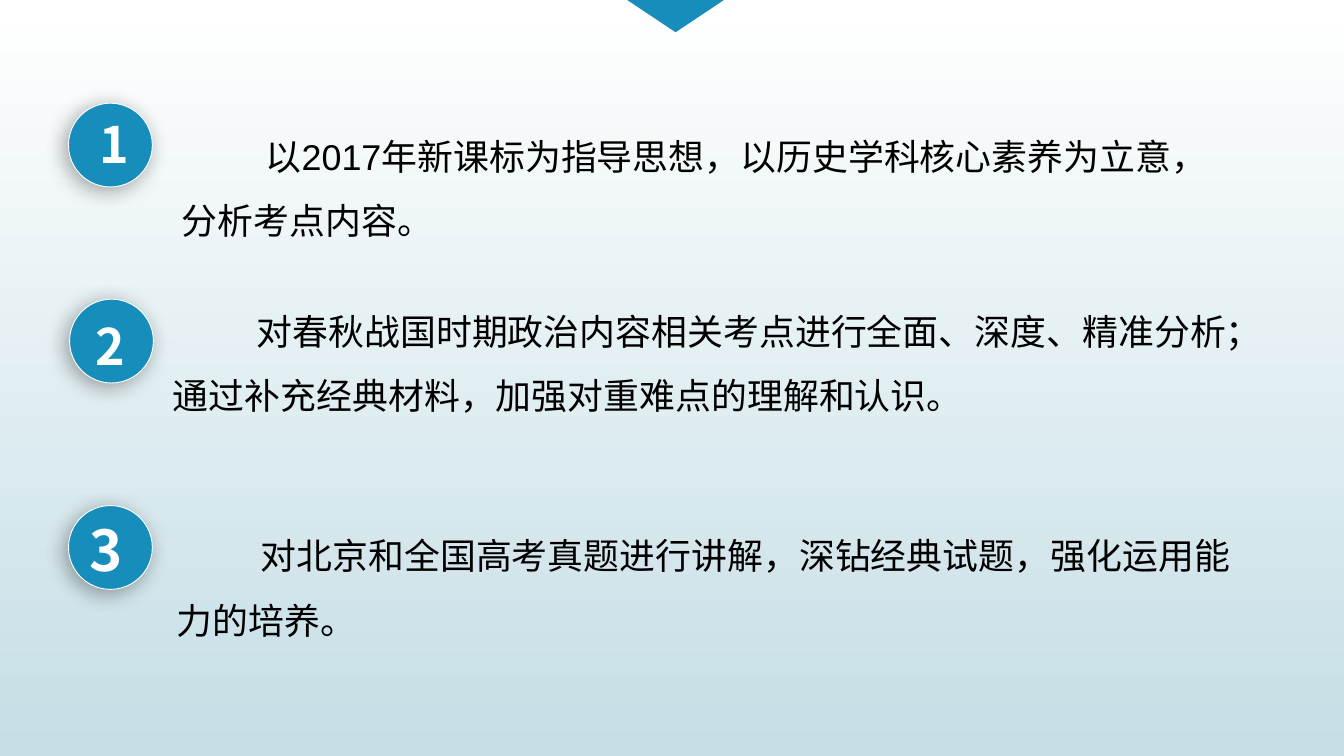
"""Build a slide with three numbered statements on a pale gradient."""
from lxml.etree import SubElement
from pptx import Presentation
from pptx.dml.color import RGBColor
from pptx.enum.shapes import MSO_SHAPE
from pptx.enum.text import MSO_ANCHOR, MSO_AUTO_SIZE, PP_ALIGN
from pptx.oxml.ns import qn
from pptx.util import Pt

WIDTH, HEIGHT = 750, 422
BLUE, WHITE, BLACK = "178DBB", "FFFFFF", "000000"
BACKGROUND = (WHITE, "C5DEE5")
BADGE, DIGIT_BOX = 46.8, 50
CHINESE_FONT = "Noto Sans CJK SC"
TEXT_RIGHT = 694.8

STATEMENTS = [
    dict(digit="1", size=28, badge=(61.6, 81), digit_center=(64, 80),
         corner=(89.3, 56.9), height=85, insets=(12.2, 6),
         text="以2017年新课标为指导思想，以历史学科核心素养为立意，分析考点内容。"),
    dict(digit="2", size=28, badge=(62.2, 190.4), digit_center=(61.5, 193),
         corner=(90, 157.7), height=79.2, insets=(6.5, 3),
         text="对春秋战国时期政治内容相关考点进行全面、深度、精准分析；"
              "通过补充经典材料，加强对重难点的理解和认识。"),
    dict(digit="3", size=31.4, badge=(61.6, 305.6), digit_center=(59.5, 306.5),
         corner=(92.2, 283), height=79.2, insets=(6.5, 3),
         text="对北京和全国高考真题进行讲解，深钻经典试题，强化运用能力的培养。"),
]


def color(value):
    return RGBColor.from_string(value)


def add_text(page, text, left, top, width, height, size, font="Arial", fill=BLACK,
             bold=False, align=PP_ALIGN.LEFT, anchor=MSO_ANCHOR.TOP, insets=(0, 0),
             indent=0, spacing=1, grow=False):
    box = page.shapes.add_textbox(Pt(left), Pt(top), Pt(width), Pt(height))
    frame = box.text_frame
    frame.word_wrap = True
    frame.auto_size = MSO_AUTO_SIZE.SHAPE_TO_FIT_TEXT if grow else MSO_AUTO_SIZE.NONE
    frame.vertical_anchor = anchor
    frame.margin_left = frame.margin_right = Pt(insets[0])
    frame.margin_top = frame.margin_bottom = Pt(insets[1])
    para = frame.paragraphs[0]
    para.alignment = align
    para.line_spacing = spacing
    if indent:
        para._p.get_or_add_pPr().set("indent", str(Pt(indent)))
    span = para.add_run()
    span.text = text
    span.font.size = Pt(size)
    span.font.name = font
    span.font.bold = bold
    span.font.color.rgb = color(fill)
    SubElement(span._r.get_or_add_rPr(), qn("a:ea"), typeface=CHINESE_FONT)


def add_blue_shape(page, kind, left, top, width, height):
    shape = page.shapes.add_shape(kind, Pt(left), Pt(top), Pt(width), Pt(height))
    shape.shadow.inherit = False
    shape.fill.solid()
    shape.fill.fore_color.rgb = color(BLUE)
    shape.line.fill.background()
    return shape


def add_badge(page, center_x, center_y):
    badge = add_blue_shape(page, MSO_SHAPE.OVAL, center_x - BADGE / 2,
                           center_y - BADGE / 2, BADGE, BADGE)
    badge.line.color.rgb = color(WHITE)
    badge.line.width = Pt(0.5)
    effects = badge._element.spPr.find(qn("a:effectLst"))
    shadow = SubElement(effects, qn("a:outerShdw"), blurRad=str(Pt(12)),
                        dist=str(Pt(3)), dir=str(135 * 60000), rotWithShape="0")
    shade = SubElement(shadow, qn("a:srgbClr"), val=BLACK)
    SubElement(shade, qn("a:alpha"), val="34000")


def add_statement(page, item):
    add_badge(page, *item["badge"])
    center_x, center_y = item["digit_center"]
    add_text(page, item["digit"], center_x - DIGIT_BOX / 2, center_y - DIGIT_BOX / 2,
             DIGIT_BOX, DIGIT_BOX, item["size"], font=CHINESE_FONT, fill=WHITE,
             bold=True, align=PP_ALIGN.CENTER, anchor=MSO_ANCHOR.MIDDLE)
    left, top = item["corner"]
    add_text(page, item["text"], left, top, TEXT_RIGHT - left, item["height"], 20,
             insets=item["insets"], indent=46.8, spacing=1.5, grow=True)


def main():
    deck = Presentation()
    deck.slide_width, deck.slide_height = Pt(WIDTH), Pt(HEIGHT)
    page = deck.slides.add_slide(deck.slide_layouts[6])
    backdrop = page.background.fill
    backdrop.gradient()
    backdrop.gradient_angle = 270
    for stop, value in zip(backdrop.gradient_stops, BACKGROUND):
        stop.color.rgb = color(value)
    for item in STATEMENTS:
        add_statement(page, item)
    pointer = add_blue_shape(page, MSO_SHAPE.ISOSCELES_TRIANGLE, 350, 0, 54, 18)
    pointer.rotation = 180
    deck.save("out.pptx")


if __name__ == "__main__":
    main()
